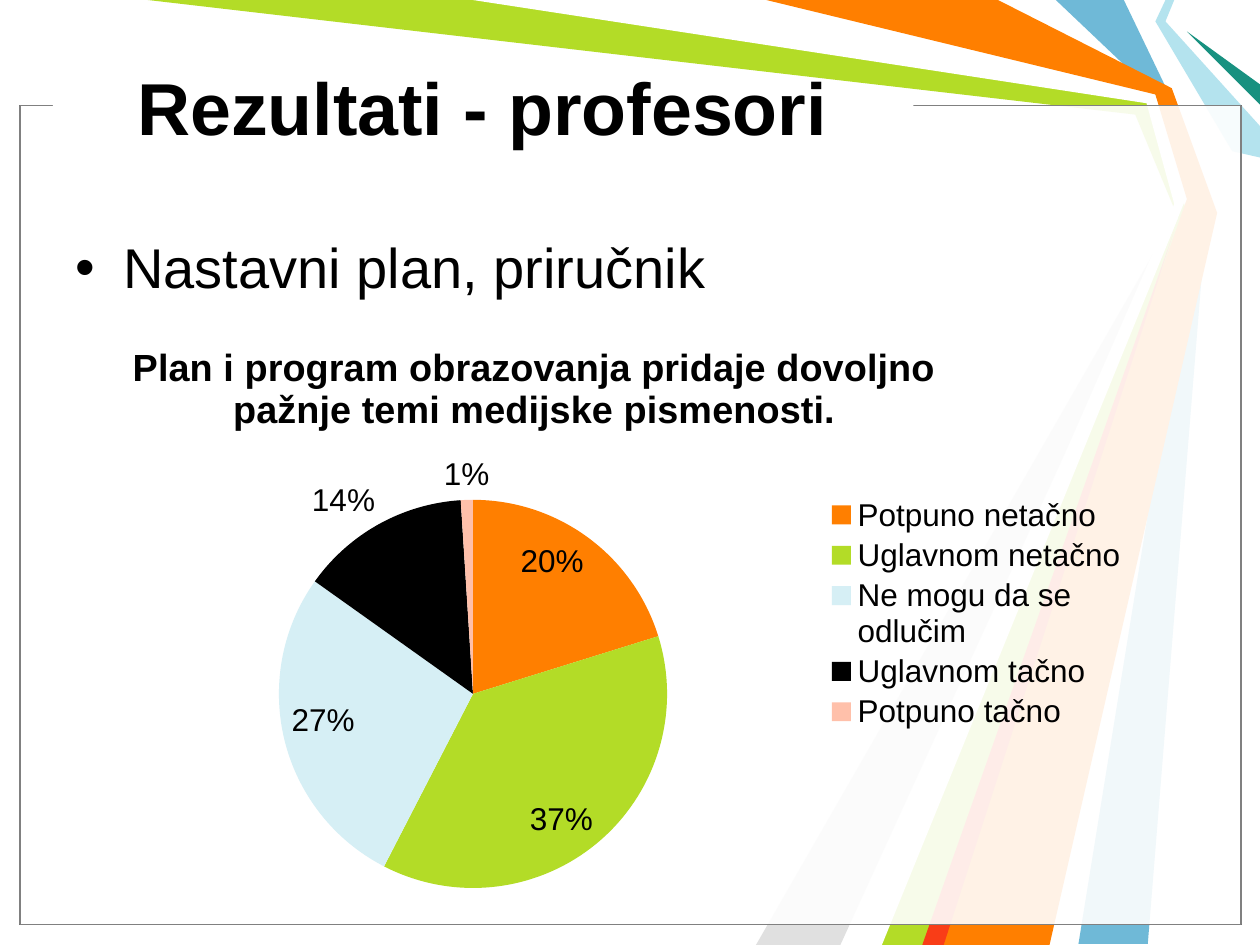
from lxml.etree import SubElement
from pptx import Presentation
from pptx.chart.data import CategoryChartData
from pptx.dml.color import RGBColor
from pptx.enum.chart import XL_CHART_TYPE, XL_LABEL_POSITION, XL_LEGEND_POSITION
from pptx.enum.shapes import MSO_SHAPE
from pptx.enum.text import MSO_ANCHOR
from pptx.oxml import parse_xml
from pptx.oxml.ns import nsdecls, qn
from pptx.util import Inches, Pt

RIBBONS = [
    ("6FB9D7", [(8.92, 0), (9.29, 0.77), (9.58, 1.67), (9.11, 7.49), (8.56, 7.49),
                (9.5, 1.67), (9.17, 0.75), (8.38, 0)]),
    ("B3DC27", [(1.17, 0), (3.83, 0), (9.14, 0.78), (9.42, 1.69), (7.42, 7.5),
                (6.92, 7.5), (9.35, 1.73), (9.01, 0.91)]),
    ("E0E0E0", [(6.67, 7.5), (9.27, 1.81), (6, 7.5)]),
    ("FFFFFF", [(3.75, 0), (9.1, 0.82), (9.32, 1.62), (6.75, 7.5), (7, 7.5),
                (9.41, 1.58), (9.17, 0.75), (6, 0)]),
    ("B4E3EE", [(9.25, 0), (9.17, 0.17), (9.78, 1.2), (10, 1.25), (10, 1),
                (9.25, 0.17), (9.32, 0)]),
    ("189180", [(10, 0.83), (9.42, 0.25), (10, 0.67)]),
    ("FF7F00", [(6.08, 0), (7.92, 0), (9.3, 0.7), (9.66, 1.69), (8.33, 7.5),
                (7.33, 7.5), (9.42, 1.58), (9.17, 0.75)]),
    ("F93D17", [(7.32, 7.5), (9.32, 1.83), (7.49, 7.5)]),
]
ANSWERS = [
    ("Potpuno netačno", 20, "FF7F00"),
    ("Uglavnom netačno", 37, "B3DC27"),
    ("Ne mogu da se odlučim", 27, "D6EFF5"),
    ("Uglavnom tačno", 14, "000000"),
    ("Potpuno tačno", 1, "FFC0AA"),
]
OUTSIDE_ANSWERS = (3, 4)
QUESTION = "Plan i program obrazovanja pridaje dovoljno pažnje temi medijske pismenosti."


def color(hex_value):
    return RGBColor.from_string(hex_value)


def place(element, **fractions):
    for old_layout in element.findall(qn("c:layout")):
        element.remove(old_layout)
    values = "".join(f'<c:{name} val="{value}"/>' for name, value in fractions.items())
    layout = parse_xml(
        f'<c:layout {nsdecls("c")}><c:manualLayout>{values}</c:manualLayout></c:layout>')
    overlay = element.find(qn("c:overlay"))
    if overlay is None:
        element.insert(0, layout)
    else:
        overlay.addprevious(layout)


class SlideBuilder:
    font_name = "Arial"
    text_color = "000000"

    def __init__(self, slide):
        self.slide = slide

    def paint(self, shape, fill, line=None, opacity=None):
        shape.shadow.inherit = False
        shape.fill.solid()
        shape.fill.fore_color.rgb = color(fill)
        if opacity is not None:
            fill_element = shape.element.spPr.find(qn("a:solidFill"))
            SubElement(fill_element[0], qn("a:alpha"), val=str(opacity * 1000))
        if line:
            shape.line.color.rgb = color(line)
            shape.line.width = Pt(0.75)
        else:
            shape.line.fill.background()

    def ribbon(self, fill, points):
        corners = [(Inches(x), Inches(y)) for x, y in points]
        builder = self.slide.shapes.build_freeform(*corners[0])
        builder.add_line_segments(corners[1:], close=True)
        self.paint(builder.convert_to_shape(), fill)

    def rectangle(self, box, fill, line=None, opacity=None):
        shape = self.slide.shapes.add_shape(MSO_SHAPE.RECTANGLE, *map(Inches, box))
        self.paint(shape, fill, line, opacity)

    def style(self, font, size, bold=False):
        font.name = self.font_name
        font.size = Pt(size)
        font.bold = bold
        font.color.rgb = color(self.text_color)

    def text(self, box, text, size, bold=False, anchor=MSO_ANCHOR.TOP, bullet=None):
        text_frame = self.slide.shapes.add_textbox(*map(Inches, box)).text_frame
        text_frame.word_wrap = True
        text_frame.vertical_anchor = anchor
        text_frame.text = text
        paragraph = text_frame.paragraphs[0]
        if bullet:
            properties = paragraph._p.get_or_add_pPr()
            properties.set("marL", str(Inches(0.38)))
            properties.set("indent", str(Inches(-0.38)))
            SubElement(properties, qn("a:buFont"), typeface=self.font_name)
            SubElement(properties, qn("a:buChar"), char=bullet)
        self.style(paragraph.runs[0].font, size, bold)

    def pie(self, box, title, answers, outside):
        data = CategoryChartData()
        data.categories = [name for name, _, _ in answers]
        data.add_series(title, [value for _, value, _ in answers])
        chart = self.slide.shapes.add_chart(
            XL_CHART_TYPE.PIE, *map(Inches, box), data).chart
        self.style(chart.font, 18)
        self.pie_title(chart, title)
        chart.has_legend = True
        chart.legend.position = XL_LEGEND_POSITION.RIGHT
        chart.legend.include_in_layout = False
        self.style(chart.legend.font, 18)
        place(chart.element.xpath("//c:legend")[0],
              xMode="edge", yMode="edge", x=0.69, y=0.3, w=0.3, h=0.41)
        place(chart.element.xpath("//c:plotArea")[0], layoutTarget="inner",
              xMode="edge", yMode="edge", x=0.165, y=0.313, w=0.376, h=0.657)
        chart.plots[0].vary_by_categories = True
        self.pie_slices(chart.plots[0].series[0], answers, outside)

    def pie_title(self, chart, title):
        chart.has_title = True
        text_frame = chart.chart_title.text_frame
        text_frame.text = title
        self.style(text_frame.paragraphs[0].runs[0].font, 21.6, True)
        place(chart.element.xpath("//c:title")[0],
              xMode="edge", yMode="edge", x=0.017, y=0.035)

    def pie_slices(self, series, answers, outside):
        labels = series.data_labels
        labels.show_value = False
        labels.show_percentage = True
        labels.number_format = "0%"
        labels.number_format_is_linked = False
        labels.position = XL_LABEL_POSITION.INSIDE_END
        self.style(labels.font, 18)
        for index, (_, _, fill) in enumerate(answers):
            point = series.points[index]
            point.format.fill.solid()
            point.format.fill.fore_color.rgb = color(fill)
            point.format.line.fill.background()
            if index in outside:
                self.style(point.data_label.font, 18)
                point.data_label.position = XL_LABEL_POSITION.OUTSIDE_END
        for label in labels._element.findall(qn("c:dLbl")):
            label.find(qn("c:showVal")).set("val", "0")
            label.find(qn("c:showPercent")).set("val", "1")


def main():
    presentation = Presentation()
    presentation.slide_width = Inches(10)
    presentation.slide_height = Inches(7.5)
    builder = SlideBuilder(presentation.slides.add_slide(presentation.slide_layouts[6]))
    for fill, points in RIBBONS:
        builder.ribbon(fill, points)
    for line in ("000000", "808080"):
        builder.rectangle((0.16, 0.84, 9.69, 6.5), "FFFFFF", line, 69)
    builder.rectangle((0.42, 0.74, 6.83, 0.17), "FFFFFF")
    builder.text((0.99, 0.22, 6.89, 1.25), "Rezultati - profesori", 42, True,
                 MSO_ANCHOR.MIDDLE)
    builder.text((0.5, 1.8, 9, 4.9), "Nastavni plan, priručnik", 32, bullet="•")
    builder.pie((0.86, 2.5, 8.2, 4.69), QUESTION, ANSWERS, OUTSIDE_ANSWERS)
    presentation.save("out.pptx")


if __name__ == "__main__":
    main()
